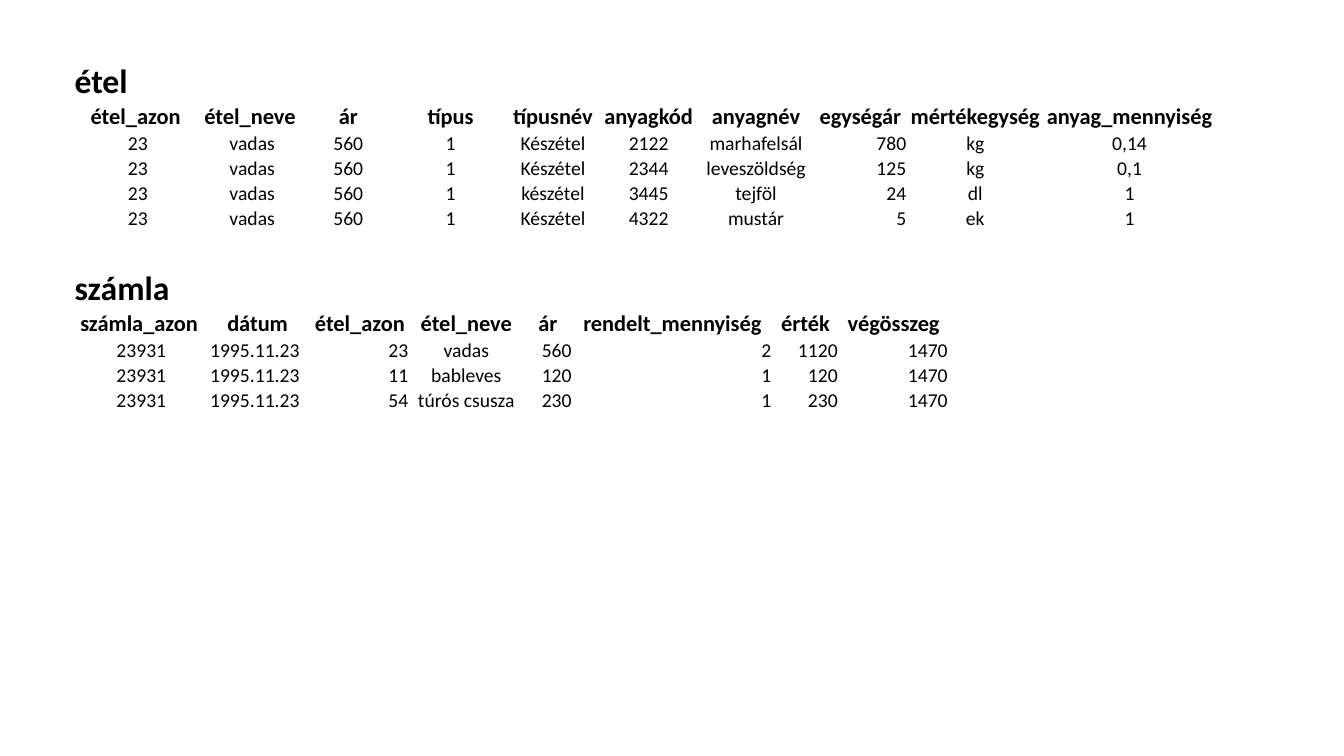
import pptx
import pptx.util
import pptx.dml.color
import pptx.enum.text
import lxml.etree
from pptx.oxml.ns import qn

# Content: pad names the columns whose values start with a hard space
TABLES = [
    {
        "title": "étel", "top": 0.6, "height": 1.66, "row": 0.24,
        "cols": [1.23, 1.04, 0.91, 1.12, 0.91, 0.99, 1.14, 0.93, 1.35, 1.71],
        "align": "cccccccrcc", "pad": (0, 1), "edge": True,
        "heads": ["étel_azon", "étel_neve", "ár", "típus", "típusnév", "anyagkód",
                  "anyagnév", "egységár", "mértékegység", "anyag_mennyiség"],
        "rows": [
            ["23", "vadas", "560", "1", "Készétel", "2122", "marhafelsál", "780", "kg", "0,14"],
            ["23", "vadas", "560", "1", "Készétel", "2344", "leveszöldség", "125", "kg", "0,1"],
            ["23", "vadas", "560", "1", "készétel", "3445", "tejföl", "24", "dl", "1"],
            ["23", "vadas", "560", "1", "Készétel", "4322", "mustár", "5", "ek", "1"],
        ],
    },
    {
        "title": "számla", "top": 2.65, "height": 1.41, "row": 0.2,
        "cols": [1.3, 1.05, 0.98, 1.13, 0.49, 1.98, 0.66, 1.09],
        "align": "clrcrrrr", "pad": (0, 1, 7), "edge": False,
        "heads": ["számla_azon", "dátum", "étel_azon", "étel_neve", "ár",
                  "rendelt_mennyiség", "érték", "végösszeg"],
        "rows": [
            ["23931", "1995.11.23", "23", "vadas", "560", "2", "1120", "1470"],
            ["23931", "1995.11.23", "11", "bableves", "120", "1", "120", "1470"],
            ["23931", "1995.11.23", "54", "túrós csusza", "230", "1", "230", "1470"],
        ],
    },
]
COLORS = {"text": "000000", "paper": "FFFFFF"}
LEFT = 0.73
HARD = chr(160)
Inches = pptx.util.Inches
SIDES = pptx.enum.text.PP_ALIGN
ALIGN = {"l": SIDES.LEFT, "c": SIDES.CENTER, "r": SIDES.RIGHT}


def color(name):
    return pptx.dml.color.RGBColor.from_string(COLORS[name])


def add_edge(cell):
    props = cell._tc.get_or_add_tcPr()
    for side in ("a:lnL", "a:lnR", "a:lnT"):
        line = lxml.etree.SubElement(props, qn(side), w="12700")
        fill = lxml.etree.SubElement(line, qn("a:solidFill"))
        lxml.etree.SubElement(fill, qn("a:srgbClr"), val=COLORS["paper"])


def set_cell(cell, text, side, size, bold, edge):
    if edge:
        add_edge(cell)
    cell.fill.solid()
    cell.fill.fore_color.rgb = color("paper")
    cell.margin_left = cell.margin_right = cell.margin_top = Inches(0.01)
    cell.margin_bottom = 0
    cell.vertical_anchor = pptx.enum.text.MSO_ANCHOR.BOTTOM
    if not text:
        return
    para = cell.text_frame.paragraphs[0]
    para.text = text
    para.alignment = ALIGN[side]
    font = para.runs[0].font
    font.name = "Calibri"
    font.size = pptx.util.Pt(size)
    font.bold = bold
    font.color.rgb = color("text")


def add_grid(slide, data):
    count = len(data["cols"])
    # Title row, heading row, then the values
    lines = [[data["title"]] + [""] * (count - 1), data["heads"]]
    for row in data["rows"]:
        lines.append([HARD + t if c in data["pad"] else t for c, t in enumerate(row)])
    frame = slide.shapes.add_table(
        len(lines), count, Inches(LEFT), Inches(data["top"]),
        Inches(sum(data["cols"])), Inches(data["height"]))
    table = frame.table
    table.first_row = table.horz_banding = False
    for col, width in zip(table.columns, data["cols"]):
        col.width = Inches(width)
    for r, line in enumerate(lines):
        table.rows[r].height = Inches(data["row"])
        size = (24, 16, 14)[min(r, 2)]
        sides = ("l" * count, "c" * count, data["align"])[min(r, 2)]
        for c, text in enumerate(line):
            set_cell(table.cell(r, c), text, sides[c], size, r < 2,
                     data["edge"] and r == 0)
    frame.height = Inches(data["height"])


def main():
    deck = pptx.Presentation()
    deck.slide_width = Inches(13.33)
    deck.slide_height = Inches(7.5)
    slide = deck.slides.add_slide(deck.slide_layouts[6])
    for data in TABLES:
        add_grid(slide, data)
    deck.save("out.pptx")


if __name__ == "__main__":
    main()
